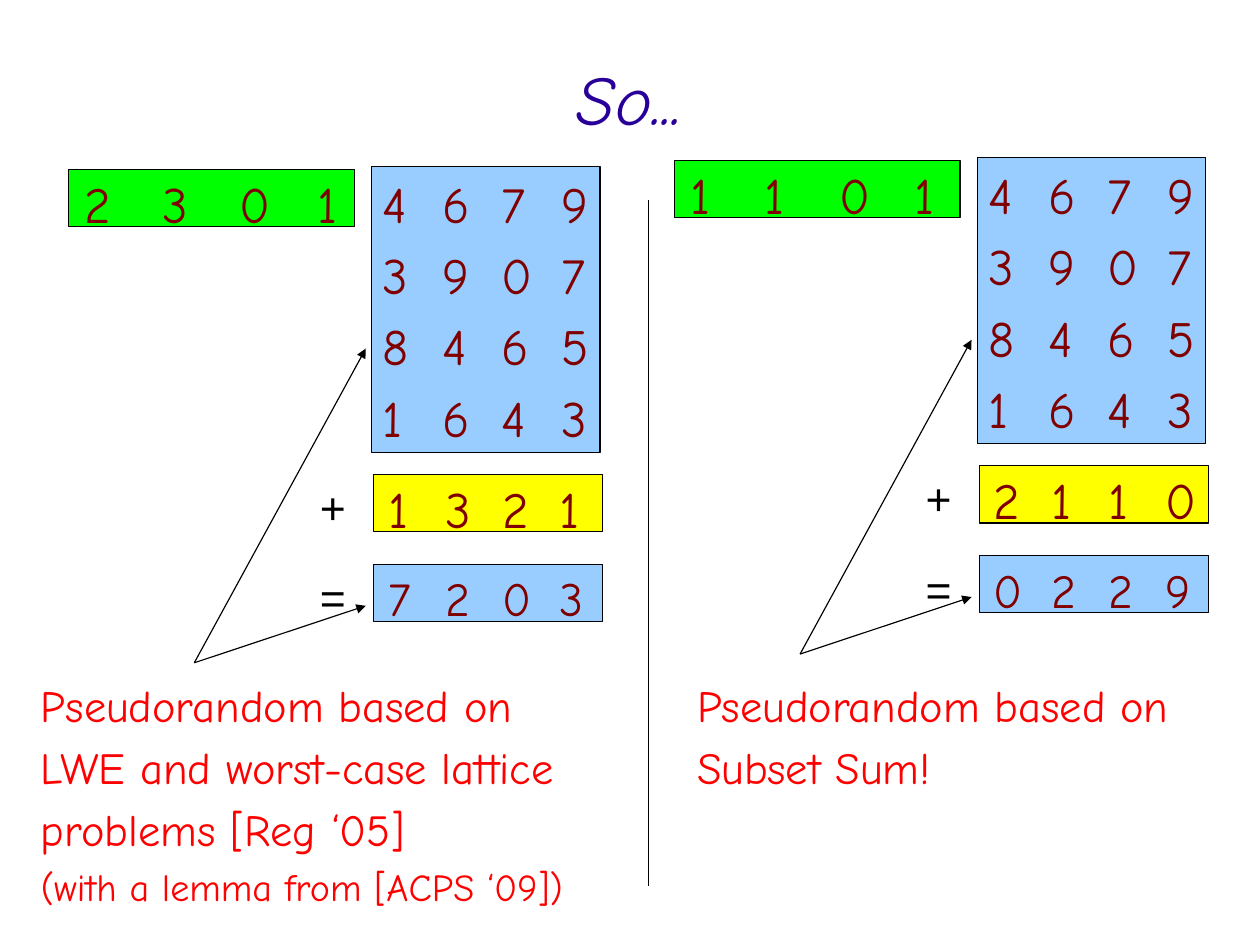
"""Build the slide comparing LWE and subset-sum pseudorandomness."""
import lxml.etree
import pptx
import pptx.dml.color
import pptx.enum.shapes
import pptx.enum.text
import pptx.oxml.ns
import pptx.util

Pt = pptx.util.Pt
RGBColor = pptx.dml.color.RGBColor
ANCHOR = pptx.enum.text.MSO_ANCHOR
qn = pptx.oxml.ns.qn

BLACK = RGBColor(0x00, 0x00, 0x00)
INDIGO = RGBColor(0x28, 0x00, 0x99)
MAROON = RGBColor(0x80, 0x00, 0x00)
RED = RGBColor(0xFF, 0x00, 0x00)
SKY = RGBColor(0x99, 0xCC, 0xFF)
GREEN = RGBColor(0x00, 0xFF, 0x00)
YELLOW = RGBColor(0xFF, 0xFF, 0x00)
HAND_FONT = "Comic Neue"

MATRIX = ["4679", "3907", "8465", "1643"]
HALVES = [
    (0, 0, "2301", 49, "1321", "7203", 18.7, 366,
     [("Pseudorandom based on\vLWE and worst-case lattice problems [Reg ‘05]", 28),
      ("(with a lemma from [ACPS ‘09])", 24)]),
    (381.6, -5.5, "1101", 47, "2110", "0229", 432, 324,
     [("Pseudorandom based on\vSubset Sum!", 28)]),
]


def write(frame, lines, font_name, color, spacing, insets, pitch=0):
    frame.word_wrap = True
    frame.margin_left, frame.margin_top, frame.margin_right, frame.margin_bottom = map(Pt, insets)
    frame.text = "\n".join(text for text, size in lines)
    for paragraph, (text, size) in zip(frame.paragraphs, lines):
        paragraph.alignment = pptx.enum.text.PP_ALIGN.LEFT
        paragraph.line_spacing = spacing
        if pitch:
            stops = lxml.etree.SubElement(paragraph._p.get_or_add_pPr(), qn("a:tabLst"))
            for column in (1, 2, 3):
                lxml.etree.SubElement(stops, qn("a:tab"), pos=str(Pt(column * pitch)), algn="l")
        paragraph.font.name = font_name
        paragraph.font.size = Pt(size)
        paragraph.font.color.rgb = color


def draw_line(x1, y1, x2, y2, arrow):
    line = slide.shapes.add_connector(
        pptx.enum.shapes.MSO_CONNECTOR.STRAIGHT, Pt(x1), Pt(y1), Pt(x2), Pt(y2))
    line.line.color.rgb = BLACK
    line.line.width = Pt(0.75)
    if arrow:
        lxml.etree.SubElement(line.line._get_or_add_ln(), qn("a:tailEnd"), type="triangle")
    lxml.etree.SubElement(line._element.spPr, qn("a:effectLst"))


deck = pptx.Presentation()
deck.slide_width = Pt(793.7)
deck.slide_height = Pt(595.28)
slide = deck.slides.add_slide(deck.slide_layouts[5])

title = slide.shapes.title
title.left, title.top, title.width, title.height = Pt(39.6), Pt(0), Pt(714.2), Pt(126)
title.text_frame.auto_size = pptx.enum.text.MSO_AUTO_SIZE.NONE
title.text_frame.vertical_anchor = ANCHOR.MIDDLE
write(title.text_frame, [("So...", 44)], HAND_FONT, INDIGO, 0.93, (0, 2.9, 0, 0))
heading = title.text_frame.paragraphs[0]
heading.alignment = pptx.enum.text.PP_ALIGN.CENTER
heading.font.italic = True

draw_line(408.3, 558, 408.3, 126, False)

for dx, dy, secret, secret_pitch, noise, result, caption_left, caption_width, caption in HALVES:
    for left, top, width, height, fill, rows, size, pitch, insets in [
        (234, 105, 144, 180, SKY, MATRIX, 32, 37.5, (7.2, 0, 0, 6)),
        (43.2, 106.6, 180, 36, GREEN, [secret], 32, secret_pitch, (10, 3.6, 0, 3.6)),
        (235.5, 299, 144, 36, YELLOW, [noise], 32, 36, (9, 3.6, 0, 3.6)),
        (235.5, 355.5, 144, 36, SKY, [result], 30, 36, (9, 3.6, 0, 3.6)),
    ]:
        block = slide.shapes.add_shape(
            pptx.enum.shapes.MSO_SHAPE.RECTANGLE,
            Pt(left + dx), Pt(top + dy), Pt(width), Pt(height))
        block.shadow.inherit = False
        block.fill.solid()
        block.fill.fore_color.rgb = fill
        block.line.color.rgb = BLACK
        block.line.width = Pt(0.75)
        block.text_frame.vertical_anchor = ANCHOR.MIDDLE
        digits = [("\t".join(row), size) for row in rows]
        write(block.text_frame, digits, HAND_FONT, MAROON, 1.17, insets, pitch)

    for sign, top in [("+", 299.5), ("=", 356.5)]:
        operator = slide.shapes.add_textbox(Pt(194.4 + dx), Pt(top + dy), Pt(36), Pt(38))
        write(operator.text_frame, [(sign, 28)], "Arial", BLACK, 0.93, (7.2, 5.8, 7.2, 3.6))

    for tip in (219.6, 381.6):
        draw_line(122.4 + dx, 417.5 + dy, 230.4 + dx, tip + dy, True)

    claim = slide.shapes.add_textbox(Pt(caption_left), Pt(417.6), Pt(caption_width), Pt(86))
    write(claim.text_frame, caption, HAND_FONT, RED, 1.17, (7.2, 3.6, 7.2, 3.6))

deck.save("out.pptx")
